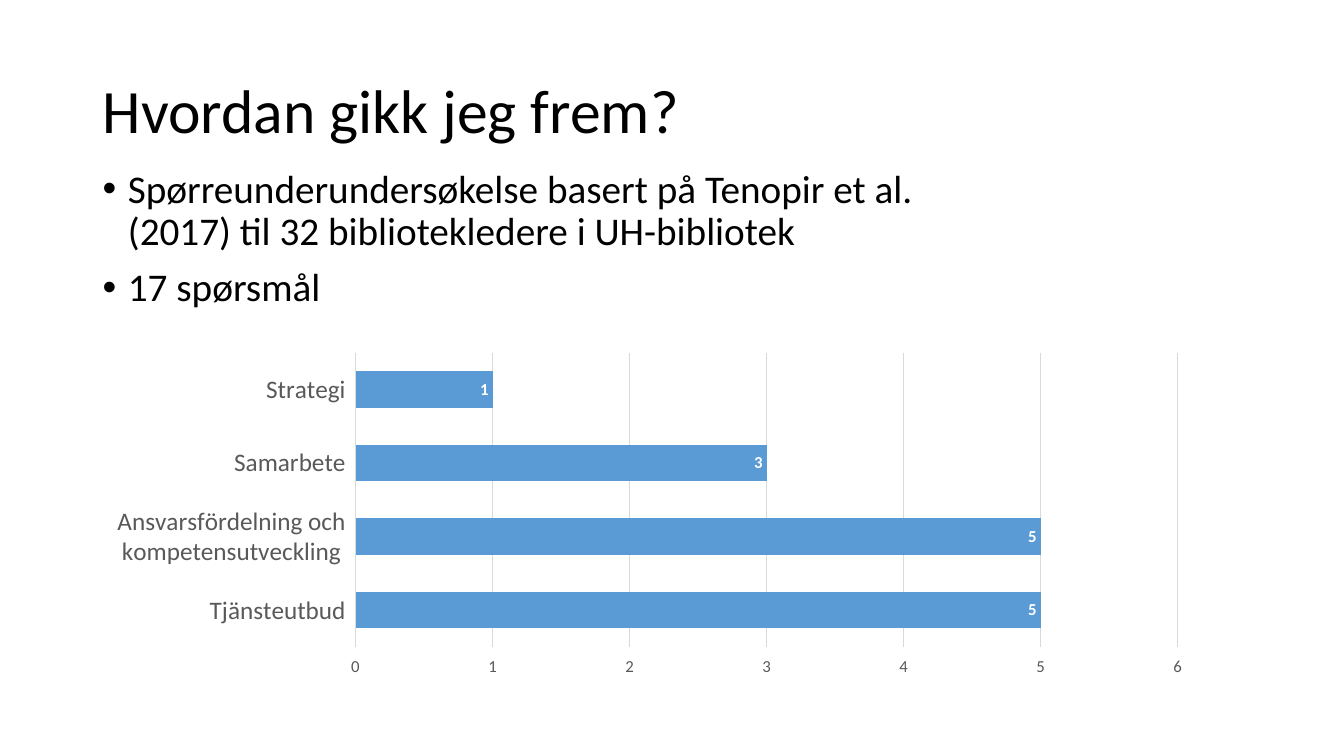
from dataclasses import dataclass

from lxml import etree
from pptx import Presentation
from pptx.chart.data import CategoryChartData
from pptx.dml.color import RGBColor
from pptx.enum.chart import XL_CHART_TYPE, XL_LABEL_POSITION, XL_TICK_MARK
from pptx.enum.text import MSO_ANCHOR
from pptx.oxml.ns import qn
from pptx.util import Inches, Pt

BAR = XL_CHART_TYPE.BAR_CLUSTERED
IN_END = XL_LABEL_POSITION.INSIDE_END
OUT = XL_TICK_MARK.OUTSIDE
TOP, MID = MSO_ANCHOR.TOP, MSO_ANCHOR.MIDDLE

FONT = "Calibri"
COLORS = {
    "text": "000000",
    "axis": "595959",
    "grid": "D9D9D9",
    "bar": "5B9BD5",
    "label": "FFFFFF",
}


@dataclass
class Box:
    left: float
    top: float
    width: float
    height: float

    def place(self) -> tuple:
        return tuple(map(Inches, (self.left, self.top, self.width, self.height)))


@dataclass
class Block:
    box: Box
    lines: list[str]
    size: int
    anchor: MSO_ANCHOR = TOP
    bullet: bool = False


BLOCKS = [
    Block(Box(0.92, 0.4, 11.5, 1.45), ["Hvordan gikk jeg frem?"], 44, anchor=MID),
    Block(
        Box(0.92, 1.63, 8.48, 3.19),
        [
            "Spørreunderundersøkelse basert på Tenopir et al. (2017) "
            "til 32 bibliotekledere i UH-bibliotek",
            "17 spørsmål",
        ],
        28,
        bullet=True,
    ),
]

CHART = Box(0.76, 3.49, 11.11, 3.29)
PLOT = {"x": 0.249, "y": 0.003, "w": 0.734, "h": 0.887}
COUNTS = {
    "Tjänsteutbud": 5,
    "Ansvarsfördelning och kompetensutveckling": 5,
    "Samarbete": 3,
    "Strategi": 1,
}


def color(name: str) -> RGBColor:
    return RGBColor.from_string(COLORS[name])


def style(font, size: int, name: str, bold: bool = False) -> None:
    font.name = FONT
    font.size = Pt(size)
    font.bold = bold
    font.color.rgb = color(name)


def add_text(slide, box: Box, lines: list[str], *, size: int,
             anchor: MSO_ANCHOR = TOP, bullet: bool = False) -> None:
    frame = slide.shapes.add_textbox(*box.place()).text_frame
    frame.word_wrap = True
    frame.vertical_anchor = anchor
    for i, line in enumerate(lines):
        para = frame.paragraphs[0] if i == 0 else frame.add_paragraph()
        para.line_spacing = 0.9
        run = para.add_run()
        run.text = line
        style(run.font, size, "text")
        if bullet:
            para.space_before = Pt(10)
            props = para._p.get_or_add_pPr()
            props.set("marL", str(Inches(0.25)))
            props.set("indent", str(-Inches(0.25)))
            etree.SubElement(props, qn("a:buFont"), typeface="Arial")
            etree.SubElement(props, qn("a:buChar"), char="•")


def set_plot(chart) -> None:
    """Fix the inner plot area as fractions of the chart."""
    area = chart._chartSpace.chart.plotArea
    for old in area.findall(qn("c:layout")):
        area.remove(old)
    layout = etree.Element(qn("c:layout"))
    area.insert(0, layout)
    manual = etree.SubElement(layout, qn("c:manualLayout"))
    parts = {"layoutTarget": "inner", "xMode": "edge", "yMode": "edge", **PLOT}
    for tag, value in parts.items():
        etree.SubElement(manual, qn(f"c:{tag}"), val=str(value))


def set_axis(axis, size: int) -> None:
    style(axis.tick_labels.font, size, "axis")
    axis.major_tick_mark = OUT
    axis.format.line.fill.background()


def add_bars(slide) -> None:
    data = CategoryChartData()
    data.categories = list(COUNTS)
    data.add_series("Series 1", list(COUNTS.values()))
    chart = slide.shapes.add_chart(BAR, *CHART.place(), data).chart
    chart.has_legend = False
    chart.has_title = False
    style(chart.font, 10, "text")
    set_plot(chart)

    # Axes and grid
    set_axis(chart.category_axis, 18)
    scale = chart.value_axis
    set_axis(scale, 12)
    scale.minimum_scale, scale.maximum_scale, scale.major_unit = 0, 6, 1
    scale.has_major_gridlines = True
    grid = scale.major_gridlines.format.line
    grid.color.rgb = color("grid")
    grid.width = Pt(0.75)

    # Bars and their values
    plot = chart.plots[0]
    plot.gap_width = 100
    plot.vary_by_categories = False
    bars = plot.series[0]
    bars.format.fill.solid()
    bars.format.fill.fore_color.rgb = color("bar")
    labels = bars.data_labels
    labels.show_value = True
    labels.position = IN_END
    style(labels.font, 12, "label", bold=True)


def main() -> None:
    deck = Presentation()
    deck.slide_width, deck.slide_height = Inches(13.33), Inches(7.5)
    slide = deck.slides.add_slide(deck.slide_layouts[6])

    # Title and bullets
    for block in BLOCKS:
        add_text(slide, block.box, block.lines, size=block.size,
                 anchor=block.anchor, bullet=block.bullet)

    # Chart
    add_bars(slide)
    deck.save("out.pptx")


if __name__ == "__main__":
    main()
